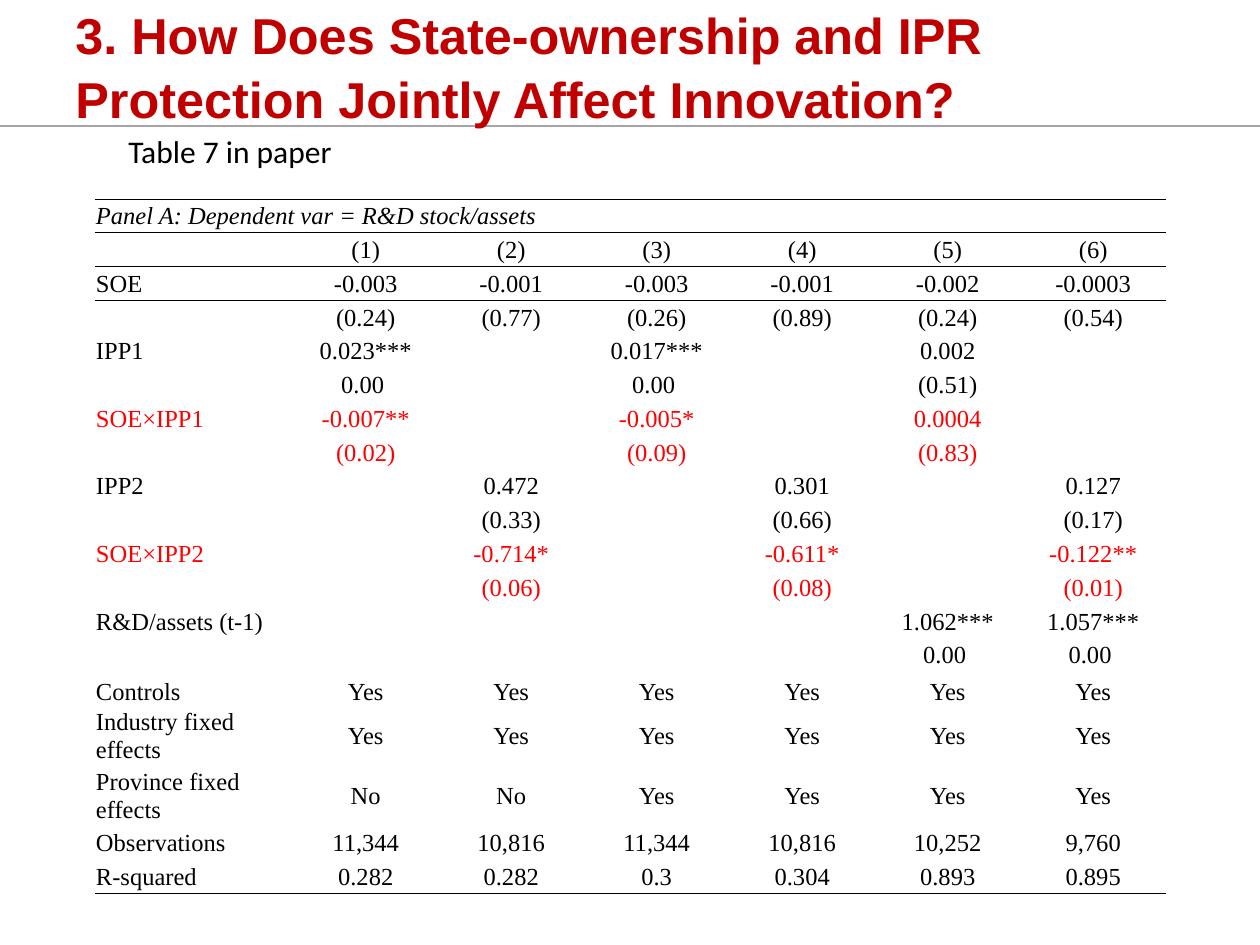
import lxml.etree
import pptx
import pptx.dml.color
import pptx.enum.shapes
import pptx.enum.text
import pptx.oxml.ns
import pptx.util

PX = 914400 // 126
COLORS = {"title": "C00000", "text": "000000", "highlight": "FF0000",
          "divider": "A6A6A6", "rule": "000000"}
NO_TABLE_STYLE = "{2D5ABB26-0587-4C30-8999-92F81FD0307C}"
TABLE_SIZE = 14
LABEL_WIDTH, VALUES_WIDTH = 198, 873
SINGLE_ROWS_HEIGHT, DOUBLE_ROW_HEIGHT = 575, 60
TWO_LINE_LABELS = ("Industry fixed effects", "Province fixed effects")

PANEL = "Panel A: Dependent var = R&D stock/assets"
REGRESSIONS = [
    [PANEL] + [""] * 6,
    ["", "(1)", "(2)", "(3)", "(4)", "(5)", "(6)"],
    ["SOE", "-0.003", "-0.001", "-0.003", "-0.001", "-0.002", "-0.0003"],
    ["", "(0.24)", "(0.77)", "(0.26)", "(0.89)", "(0.24)", "(0.54)"],
    ["IPP1", "0.023***", "", "0.017***", "", "0.002", ""],
    ["", "0.00 ", "", "0.00 ", "", "(0.51)", ""],
    ["SOE×IPP1", "-0.007**", "", "-0.005*", "", "0.0004", ""],
    ["", "(0.02)", "", "(0.09)", "", "(0.83)", ""],
    ["IPP2", "", "0.472", "", "0.301", "", "0.127"],
    ["", "", "(0.33)", "", "(0.66)", "", "(0.17)"],
    ["SOE×IPP2", "", "-0.714*", "", "-0.611*", "", "-0.122**"],
    ["", "", "(0.06)", "", "(0.08)", "", "(0.01)"],
    ["R&D/assets (t-1)", "", "", "", "", "1.062***", "1.057***"],
    ["", "", "", "", "", "0.00 ", "0.00 "],
    ["Controls"] + ["Yes"] * 6,
    ["Industry fixed effects"] + ["Yes"] * 6,
    ["Province fixed effects"] + ["No"] * 2 + ["Yes"] * 4,
    ["Observations", "11,344", "10,816", "11,344", "10,816", "10,252", "9,760"],
    ["R-squared", "0.282", "0.282", "0.3", "0.304", "0.893", "0.895"],
]


def rgb(role):
    return pptx.dml.color.RGBColor.from_string(COLORS[role])


def set_all(target, values):
    for name, value in values.items():
        setattr(target, name, value)


def write(paragraph, words, role, **font):
    run = paragraph.add_run()
    run.text = words
    set_all(run.font, font)
    run.font.color.rgb = rgb(role)


def add_words(slide, box, words, role, frame, **font):
    """Place a text box at a px box, with a dict of text frame formats."""
    text_frame = slide.shapes.add_textbox(*(n * PX for n in box)).text_frame
    set_all(text_frame, frame)
    write(text_frame.paragraphs[0], words, role, **font)
    return text_frame


def add_divider(slide, y, width):
    divider = slide.shapes.add_connector(
        pptx.enum.shapes.MSO_CONNECTOR.STRAIGHT, 0, y * PX, width * PX, y * PX)
    divider.line.color.rgb = rgb("divider")
    divider.line.width = pptx.util.Pt(1)
    lxml.etree.SubElement(divider._element.spPr, pptx.oxml.ns.qn("a:effectLst"))


def add_rules(cell, edges):
    """Draw thin horizontal rules on the given cell edges (T before B)."""
    properties = cell._tc.get_or_add_tcPr()
    for position, edge in enumerate(edges):
        rule = lxml.etree.Element(pptx.oxml.ns.qn(f"a:ln{edge}"),
                                  w=str(pptx.util.Pt(0.5)))
        fill = lxml.etree.SubElement(rule, pptx.oxml.ns.qn("a:solidFill"))
        lxml.etree.SubElement(fill, pptx.oxml.ns.qn("a:srgbClr"), val=COLORS["rule"])
        properties.insert(position, rule)


def fill_cell(cell, words, role, is_label, anchor):
    set_all(cell, {"margin_left": PX, "margin_right": PX, "margin_top": PX,
                   "margin_bottom": 0, "vertical_anchor": anchor})
    cell.fill.background()
    paragraph = cell.text_frame.paragraphs[0]
    align = pptx.enum.text.PP_ALIGN
    paragraph.alignment = align.LEFT if is_label else align.CENTER
    if words:
        write(paragraph, words, role, size=pptx.util.Pt(TABLE_SIZE),
              name="Times New Roman", italic=words == PANEL)
    else:
        # The end mark keeps an empty cell from stretching its row.
        lxml.etree.SubElement(paragraph._p, pptx.oxml.ns.qn("a:endParaRPr"),
                              sz=str(TABLE_SIZE * 100))


def size_table(table):
    table.columns[0].width = LABEL_WIDTH * PX
    for column in list(table.columns)[1:]:
        column.width = VALUES_WIDTH * PX // 6
    single_rows = len(REGRESSIONS) - len(TWO_LINE_LABELS)
    for row, values in zip(table.rows, REGRESSIONS):
        row.height = (DOUBLE_ROW_HEIGHT * PX if values[0] in TWO_LINE_LABELS
                      else SINGLE_ROWS_HEIGHT * PX // single_rows)


def add_regression_table(slide, left, top):
    height = SINGLE_ROWS_HEIGHT + DOUBLE_ROW_HEIGHT * len(TWO_LINE_LABELS)
    frame = slide.shapes.add_table(
        len(REGRESSIONS), len(REGRESSIONS[0]), left * PX, top * PX,
        (LABEL_WIDTH + VALUES_WIDTH) * PX, height * PX)
    table = frame.table
    set_all(table, {"first_row": False, "horz_banding": False})
    table._tbl.tblPr.find(pptx.oxml.ns.qn("a:tableStyleId")).text = NO_TABLE_STYLE
    size_table(table)
    edges = {0: "TB", 1: "TB", 2: "T", len(REGRESSIONS) - 1: "B"}
    anchors = pptx.enum.text.MSO_ANCHOR
    variable = ""
    for r, values in enumerate(REGRESSIONS):
        variable = values[0] or variable
        role = "highlight" if variable.startswith("SOE×") else "text"
        anchor = anchors.BOTTOM if variable == "Controls" else anchors.MIDDLE
        for c, words in enumerate(values):
            cell = table.cell(r, c)
            fill_cell(cell, words, role, c == 0, anchor)
            add_rules(cell, edges.get(r, ""))
    table.cell(0, 0).merge(table.cell(0, 2))


def main():
    deck = pptx.Presentation()
    set_all(deck, {"slide_width": 1260 * PX, "slide_height": 945 * PX})
    slide = deck.slides.add_slide(deck.slide_layouts[6])
    add_divider(slide, 126, 1260)
    title = add_words(
        slide, (63, 4, 1134, 122),
        "3. How Does State-ownership and IPR Protection Jointly Affect Innovation?",
        "title",
        {"word_wrap": True, "vertical_anchor": pptx.enum.text.MSO_ANCHOR.MIDDLE},
        size=pptx.util.Pt(28.8), name="Arial", bold=True)
    title.paragraphs[0].line_spacing = 1.05
    add_words(slide, (116, 126, 232, 50), "Table 7 in paper", "text",
              {"word_wrap": False,
               "auto_size": pptx.enum.text.MSO_AUTO_SIZE.SHAPE_TO_FIT_TEXT},
              size=pptx.util.Pt(18), name="Calibri")
    add_regression_table(slide, 95, 199)
    deck.save("out.pptx")


if __name__ == "__main__":
    main()
